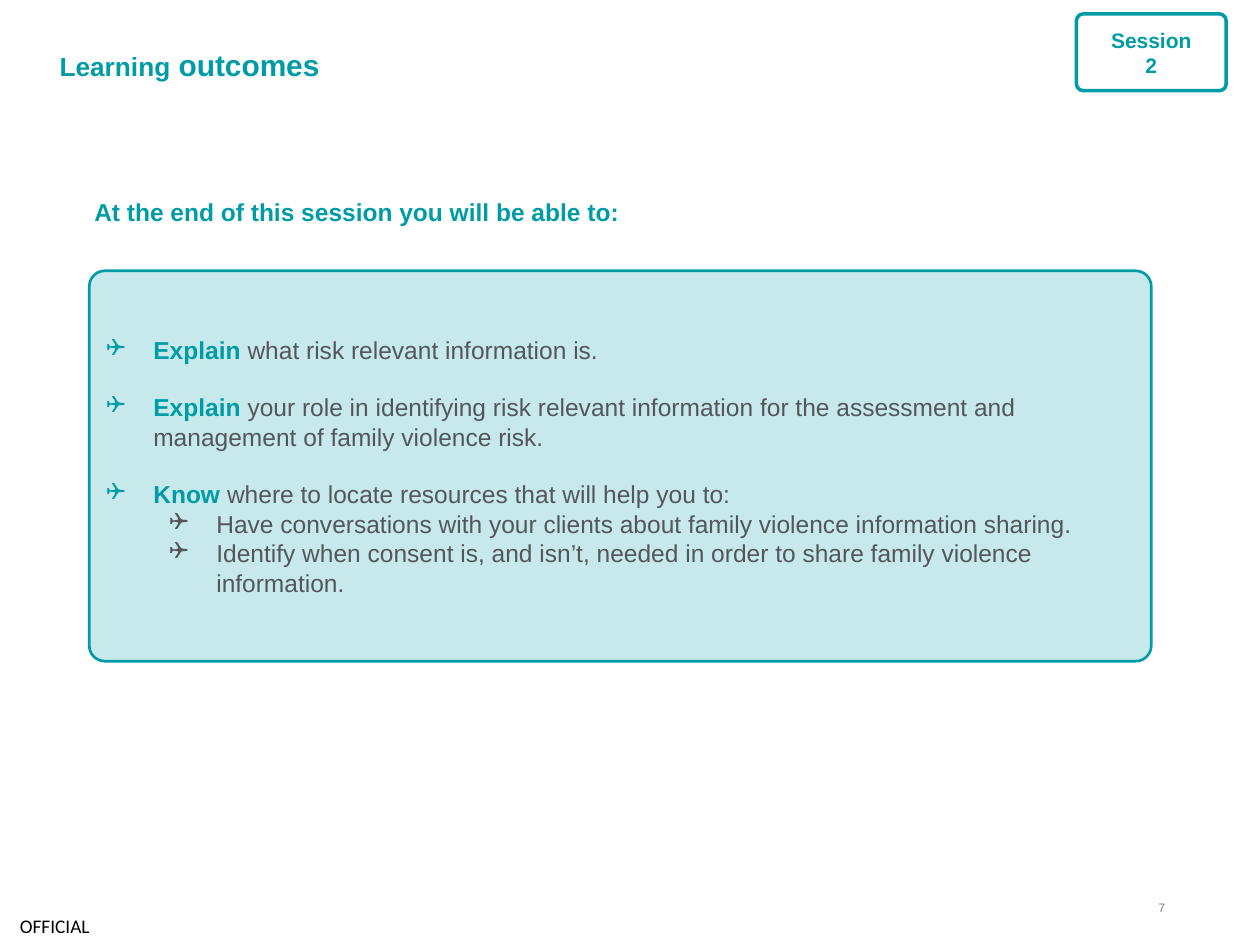
from dataclasses import dataclass
from typing import NamedTuple

from lxml.etree import SubElement
from pptx import Presentation
from pptx.dml.color import RGBColor
from pptx.enum.shapes import MSO_SHAPE as Shape
from pptx.enum.text import MSO_ANCHOR as Anchor, MSO_AUTO_SIZE as AutoSize, PP_ALIGN as Align
from pptx.oxml.ns import qn
from pptx.util import Cm, Pt


@dataclass(frozen=True)
class Theme:
    teal: RGBColor = RGBColor(0x00, 0x9C, 0xA6)
    grey: RGBColor = RGBColor(0x53, 0x56, 0x5A)
    pale_grey: RGBColor = RGBColor(0x7F, 0x7F, 0x7F)
    black: RGBColor = RGBColor(0, 0, 0)
    white: RGBColor = RGBColor(255, 255, 255)
    sans: str = "Arial"
    marking_font: str = "Calibri"
    title: float = 15
    title_large: float = 17.1
    body: float = 14
    badge: float = 12
    marking: float = 11
    number: float = 7
    panel_opacity: int = 22


THEME = Theme()


class Box(NamedTuple):
    """Left, top, width and height in centimetres."""
    left: float
    top: float
    width: float
    height: float

    def lengths(self):
        return [Cm(side) for side in self]


OUTCOMES = [
    (0, "Explain ", "what risk relevant information is."),
    (0, "Explain ", "your role in identifying risk relevant information for the "
                    "assessment and management of family violence risk."),
    (0, "Know ", "where to locate resources that will help you to:"),
    (1, "", "Have conversations with your clients about family violence information sharing."),
    (1, "", "Identify when consent is, and isn’t, needed in order to share "
            "family violence information."),
]


def set_font(font, size, color, bold=False, name=THEME.sans):
    font.name, font.size, font.bold = name, Pt(size), bold
    font.color.rgb = color


def set_margins(frame, side=0, end=0):
    frame.margin_left = frame.margin_right = Cm(side)
    frame.margin_top = frame.margin_bottom = Cm(end)


def add_title(slide, box):
    title = slide.shapes.title
    title.left, title.top, title.width, title.height = box.lengths()
    frame = title.text_frame
    frame.auto_size = AutoSize.NONE
    frame.vertical_anchor = Anchor.MIDDLE
    set_margins(frame)
    heading = frame.paragraphs[0]
    heading.alignment = Align.LEFT
    heading.space_after = Pt(3.4)
    set_font(heading.font, THEME.title, THEME.teal, bold=True)
    heading.add_run().text = "Learning"
    larger = heading.add_run()
    larger.text = " outcomes"
    larger.font.size = Pt(THEME.title_large)


def add_lead_in(slide, box):
    table = slide.shapes.add_table(1, 1, *box.lengths()).table
    table.first_row = table.horz_banding = False
    cell = table.cell(0, 0)
    cell.fill.solid()
    cell.fill.fore_color.rgb = THEME.white
    set_margins(cell, 0.1, 0.1)
    cell.text = "At the end of this session you will be able to:"
    set_font(cell.text_frame.paragraphs[0].font, THEME.body, THEME.teal, bold=True)


def add_rounded(slide, box, corner, fill, line_width):
    """Add a teal-edged rounded rectangle with middle-anchored text."""
    panel = slide.shapes.add_shape(Shape.ROUNDED_RECTANGLE, *box.lengths())
    panel.adjustments[0] = corner
    panel.shadow.inherit = False
    panel.fill.solid()
    panel.fill.fore_color.rgb = fill
    panel.line.color.rgb = THEME.teal
    panel.line.width = Pt(line_width)
    panel.text_frame.word_wrap = True
    panel.text_frame.vertical_anchor = Anchor.MIDDLE
    return panel


def add_session_badge(slide, box):
    frame = add_rounded(slide, box, 0.09, THEME.white, 2).text_frame
    set_margins(frame, 0.5, 0.13)
    session = frame.paragraphs[0]
    session.text = "Session 2"
    session.alignment = Align.CENTER
    set_font(session.font, THEME.badge, THEME.teal, bold=True)


def add_checkbox(paragraph, level):
    """Hang a checkbox bullet, stepping in with each level."""
    paragraph.level = level
    properties = paragraph._p.get_or_add_pPr()
    properties.set("marL", str(Cm(0.95 + 1.27 * level)))
    properties.set("indent", str(Cm(-0.95)))
    SubElement(properties, qn("a:buFont"), typeface="Wingdings")
    SubElement(properties, qn("a:buChar"), char="❑")


def add_outcomes(slide, box):
    panel = add_rounded(slide, box, 0.04, THEME.teal, 1.5)
    fill_color = panel._element.spPr.find(qn("a:solidFill"))[0]
    SubElement(fill_color, qn("a:alpha"), val=str(THEME.panel_opacity * 1000))
    frame = panel.text_frame
    for index, (level, verb, rest) in enumerate(OUTCOMES):
        outcome = frame.add_paragraph() if index else frame.paragraphs[0]
        outcome.alignment = Align.LEFT
        if index and level == 0:
            outcome.space_before = Pt(16)
        add_checkbox(outcome, level)
        set_font(outcome.font, THEME.body, THEME.grey)
        if verb:
            lead = outcome.add_run()
            lead.text = verb
            set_font(lead.font, THEME.body, THEME.teal, bold=True)
        outcome.add_run().text = rest


def add_footer_text(slide, box, text, align, anchor, size, color, name=THEME.sans):
    frame = slide.shapes.add_textbox(*box.lengths()).text_frame
    frame.word_wrap = True
    frame.vertical_anchor = anchor
    set_margins(frame)
    line = frame.paragraphs[0]
    line.text = text
    line.alignment = align
    set_font(line.font, size, color, name=name)


def main():
    deck = Presentation()
    deck.slide_width, deck.slide_height = Cm(25.4), Cm(19.05)
    slide = deck.slides.add_slide(deck.slide_layouts[5])
    add_footer_text(slide, Box(0, 18.26, 2.21, 0.79), "OFFICIAL", Align.CENTER,
                    Anchor.MIDDLE, THEME.marking, THEME.black, THEME.marking_font)
    add_title(slide, Box(1.2, 0.48, 19, 1.65))
    add_lead_in(slide, Box(1.8, 3.91, 21.97, 1.55))
    add_session_badge(slide, Box(21.7, 0.28, 3.02, 1.55))
    add_outcomes(slide, Box(1.8, 5.46, 21.41, 7.87))
    add_footer_text(slide, Box(22.63, 18.14, 0.86, 0.5), "7", Align.RIGHT,
                    Anchor.TOP, THEME.number, THEME.pale_grey)
    deck.save("out.pptx")


if __name__ == "__main__":
    main()
